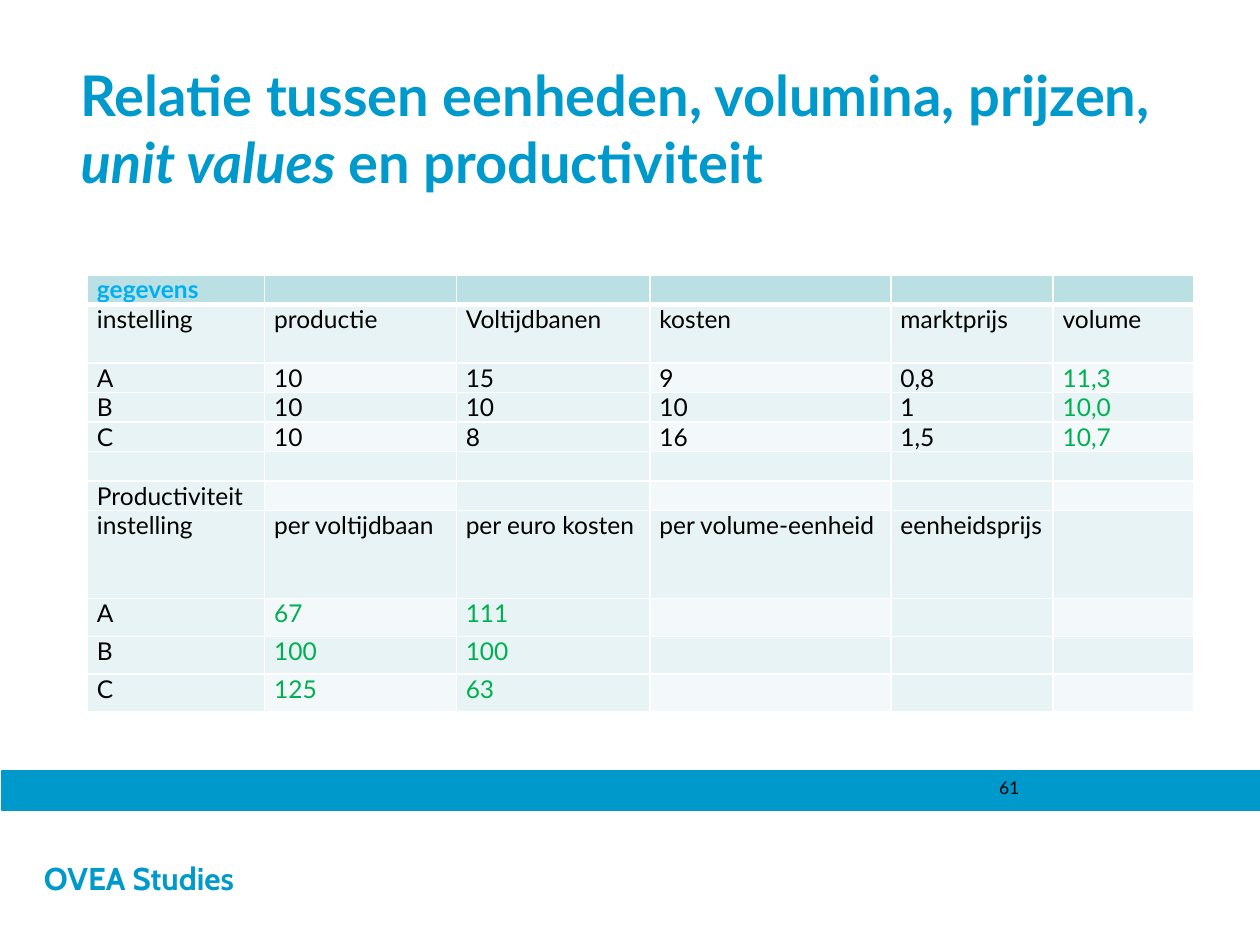
from lxml import etree
from pptx import Presentation
from pptx.dml.color import RGBColor
from pptx.enum import shapes, text
from pptx.oxml import ns
from pptx.util import Pt

HEX = {"blue": "0099CC", "sky": "00B0F0", "green": "00B050", "black": "000000",
       "white": "FFFFFF", "head": "BBE0E3", "band": "E7F3F4", "pale": "F3F9FA"}
RGB = {name: RGBColor.from_string(code) for name, code in HEX.items()}


def write(para, words, color, **form):
    run = para.add_run()
    run.text = words
    run.font.color.rgb = RGB[color]
    for key, val in form.items():
        setattr(run.font, key, val)


def edge(cell, sides):
    props = cell._tc.get_or_add_tcPr()
    for i, (side, width) in enumerate(sides.items()):
        line = etree.Element(ns.qn("a:ln" + side), w=str(Pt(width)))
        fill = etree.SubElement(line, ns.qn("a:solidFill"))
        etree.SubElement(fill, ns.qn("a:srgbClr"), val=HEX["white"])
        props.insert(i, line)


deck = Presentation()
deck.slide_width, deck.slide_height = Pt(720), Pt(540)
slide = deck.slides.add_slide(deck.slide_layouts[5])

# Footer and blue bar
bars = []
for left, top, wide, high, color in [(0, 463.7, 720.7, 76.3, "white"),
                                     (0.7, 440.6, 720, 22.3, "blue")]:
    bar = slide.shapes.add_shape(shapes.MSO_SHAPE.RECTANGLE,
                                 Pt(left), Pt(top), Pt(wide), Pt(high))
    bar.shadow.inherit = False
    bar.fill.solid()
    bar.fill.fore_color.rgb = RGB[color]
    bars.append(bar)
foot, band = bars
foot.line.fill.background()
band.line.color.rgb = RGB["blue"]
band.line.width = Pt(0.75)
frame = foot.text_frame
frame.margin_left = Pt(25)
frame.word_wrap = False
frame.vertical_anchor = text.MSO_ANCHOR.MIDDLE
frame.paragraphs[0].alignment = text.PP_ALIGN.LEFT
write(frame.paragraphs[0], "OVEA Studies", "blue", name="Cabin", size=Pt(18), bold=True)

# Title
title = slide.shapes.title
title.left, title.top, title.width, title.height = Pt(38.9), Pt(31), Pt(643.7), Pt(65.5)
frame = title.text_frame
frame.word_wrap = True
frame.auto_size = text.MSO_AUTO_SIZE.NONE
frame.vertical_anchor = text.MSO_ANCHOR.TOP
para = frame.paragraphs[0]
para.alignment = text.PP_ALIGN.LEFT
for words, slant in [("Relatie tussen eenheden, volumina, prijzen, ", False),
                     ("unit values ", True), ("en productiviteit", False)]:
    write(para, words, "blue", name="Lato", size=Pt(32), bold=True, italic=slant)

# Page number
page = slide.shapes.add_textbox(Pt(563.8), Pt(440.6), Pt(149.8), Pt(18))
page.text_frame.word_wrap = True
write(page.text_frame.paragraphs[0], "61", "black", name="Lato", size=Pt(10))

# Table: data above, productivity below
rows = [
    ["gegevens"],
    ["instelling", "productie", "Voltijdbanen", "kosten", "marktprijs", "volume"],
    ["A", "10", "15", "9", "0,8", "11,3"],
    ["B", "10", "10", "10", "1", "10,0"],
    ["C", "10", "8", "16", "1,5", "10,7"],
    [],
    ["Productiviteit"],
    ["instelling", "per voltijdbaan", "per euro kosten", "per volume-eenheid",
     "eenheidsprijs"],
    ["A", "67", "111"],
    ["B", "100", "100"],
    ["C", "125", "63"],
]
wides = [101.3, 109.5, 110.7, 137.7, 92.7, 80.3]
highs = [16.8, 33.6] + [16.8] * 5 + [50.4] + [21.6] * 3
grid = slide.shapes.add_table(len(rows), len(wides), Pt(50), Pt(157),
                              Pt(sum(wides)), Pt(sum(highs))).table
grid.first_row = grid.horz_banding = False
for col, wide in zip(grid.columns, wides):
    col.width = Pt(wide)
for row, high in zip(grid.rows, highs):
    row.height = Pt(high)

inset = {"margin_left": Pt(5.4), "margin_right": Pt(5.4), "margin_top": 0, "margin_bottom": 0}
for r, row in enumerate(rows):
    for c in range(len(wides)):
        cell = grid.cell(r, c)
        for key, val in inset.items():
            setattr(cell, key, val)
        edge(cell, {"L": 1, "R": 1, "T": 3 if r == 1 else 1, "B": 3 if r == 0 else 1})
        light = r % 2 == 0 and c % 2 == 1
        cell.fill.solid()
        cell.fill.fore_color.rgb = RGB["head" if r == 0 else "pale" if light else "band"]
        para = cell.text_frame.paragraphs[0]
        if c >= len(row):
            para._p.get_or_add_endParaRPr().set("sz", "1400")
            continue
        result = (2 <= r <= 4 and c == 5) or (r >= 8 and c > 0)
        color = "sky" if r == 0 else "green" if result else "black"
        write(para, row[c], color, name="Lato", size=Pt(14), bold=r == 0)

deck.save("out.pptx")
